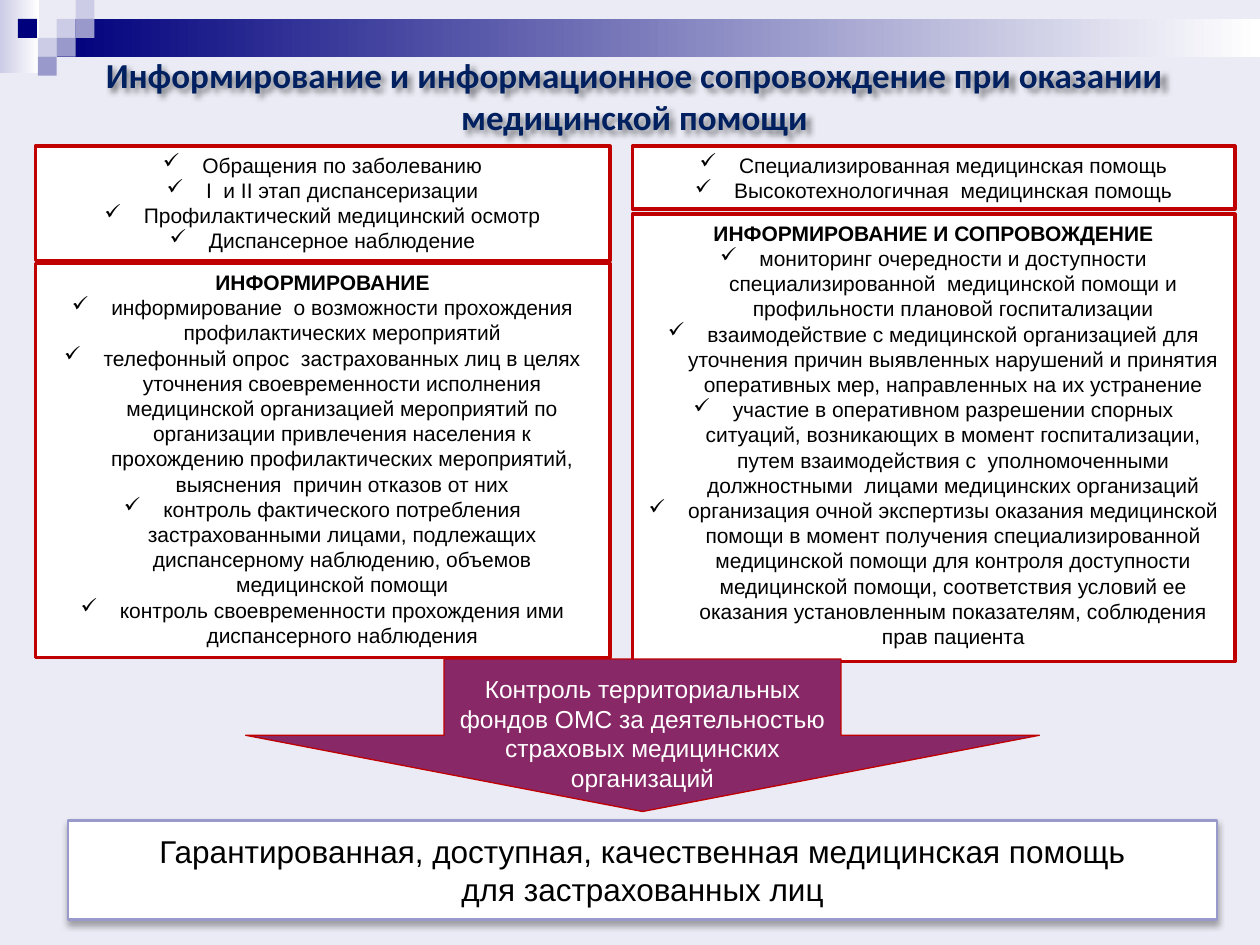
from dataclasses import dataclass
from typing import Optional

from lxml import etree
from pptx import Presentation
from pptx.dml.color import RGBColor
from pptx.enum import shapes, text
from pptx.oxml import ns
from pptx.util import Pt


@dataclass(frozen=True)
class Theme:
    background: str = "EBEBF5"
    navy: str = "00007D"
    lilac: str = "CCCCE6"
    violet: str = "9999CC"
    white: str = "FFFFFF"
    black: str = "000000"
    title: str = "002060"
    red: str = "C00000"
    plum: str = "882866"
    heading_font: str = "Calibri"
    body_font: str = "Arial"
    title_size: float = 20
    body_size: float = 12
    arrow_size: float = 14
    result_size: float = 18
    bullet_indent: float = 22.5


@dataclass(frozen=True)
class Frame:
    left: float
    top: float
    width: float
    height: float


@dataclass(frozen=True)
class Panel:
    frame: Frame
    bullets: tuple[str, ...]
    heading: Optional[str] = None


@dataclass(frozen=True)
class Shadow:
    blur: float
    distance: float
    angle: int
    opacity: int


THEME = Theme()

# Decorative mosaic: column, row and colour on an 10.8 pt grid
TILE = 10.8
TILES = (
    (3, 1, THEME.lilac), (4, 0, THEME.lilac), (4, 1, THEME.violet),
    (2, 2, THEME.lilac), (0.95, 1, THEME.navy), (3, 2, THEME.violet),
    (2, 3, THEME.violet),
)

# Left and right columns of panels
LEFT, LEFT_WIDTH = 20.2, 328.3
RIGHT, RIGHT_WIDTH = 361.4, 344.2
PANEL_TOP = 83.5
PANELS = (
    Panel(Frame(LEFT, PANEL_TOP, LEFT_WIDTH, 65.5), (
        "Обращения по заболеванию",
        "I  и II этап диспансеризации",
        "Профилактический медицинский осмотр",
        "Диспансерное наблюдение",
    )),
    Panel(Frame(LEFT, 150.5, LEFT_WIDTH, 225.4), (
        "информирование  о возможности прохождения профилактических мероприятий",
        "телефонный опрос  застрахованных лиц в целях уточнения своевременности "
        "исполнения медицинской организацией мероприятий по организации привлечения "
        "населения к прохождению профилактических мероприятий, выяснения  причин "
        "отказов от них",
        "контроль фактического потребления застрахованными лицами, подлежащих "
        "диспансерному наблюдению, объемов медицинской помощи",
        "контроль своевременности прохождения ими диспансерного наблюдения",
    ), "ИНФОРМИРОВАНИЕ"),
    Panel(Frame(RIGHT, PANEL_TOP, RIGHT_WIDTH, 36), (
        "Специализированная медицинская помощь",
        "Высокотехнологичная  медицинская помощь",
    )),
    Panel(Frame(RIGHT, 122.4, RIGHT_WIDTH, 255.6), (
        "мониторинг очередности и доступности специализированной  медицинской помощи "
        "и профильности плановой госпитализации",
        "взаимодействие с медицинской организацией для уточнения причин выявленных "
        "нарушений и принятия оперативных мер, направленных на их устранение",
        "участие в оперативном разрешении спорных ситуаций, возникающих в момент "
        "госпитализации, путем взаимодействия с  уполномоченными должностными  лицами "
        "медицинских организаций",
        "организация очной экспертизы оказания медицинской помощи в момент получения "
        "специализированной медицинской помощи для контроля доступности медицинской "
        "помощи, соответствия условий ее оказания установленным показателям, "
        "соблюдения прав пациента",
    ), "ИНФОРМИРОВАНИЕ И СОПРОВОЖДЕНИЕ"),
)


def lengths(frame: Frame) -> tuple:
    return Pt(frame.left), Pt(frame.top), Pt(frame.width), Pt(frame.height)


def add_box(page, frame: Frame, fill: str, line: Optional[str] = None, weight: float = 0,
            kind=shapes.MSO_SHAPE.RECTANGLE):
    box = page.shapes.add_shape(kind, *lengths(frame))
    box.shadow.inherit = False
    box.fill.solid()
    box.fill.fore_color.rgb = RGBColor.from_string(fill)
    if line:
        box.line.color.rgb = RGBColor.from_string(line)
        box.line.width = Pt(weight)
    else:
        box.line.fill.background()
    box.text_frame.word_wrap = True
    return box


def add_gradient(page, frame: Frame, start: str) -> None:
    box = add_box(page, frame, start)
    box.fill.gradient()
    box.fill.gradient_angle = 0
    for stop, colour in zip(box.fill.gradient_stops, (start, THEME.white)):
        stop.color.rgb = RGBColor.from_string(colour)


def add_shadow(box, shadow: Shadow) -> None:
    box.shadow.inherit = False
    effects = box.element.spPr.find(ns.qn("a:effectLst"))
    outer = etree.SubElement(
        effects, ns.qn("a:outerShdw"), blurRad=str(int(Pt(shadow.blur))),
        dist=str(int(Pt(shadow.distance))), dir=str(shadow.angle * 60000),
        algn="tl", rotWithShape="0")
    colour = etree.SubElement(outer, ns.qn("a:srgbClr"), val=THEME.black)
    etree.SubElement(colour, ns.qn("a:alpha"), val=str(shadow.opacity * 1000))


def add_para(box, words: str, size: float, colour: str, font: str = THEME.body_font,
             bold: bool = False, bullet: bool = False) -> None:
    body = box.text_frame
    para = body.paragraphs[0] if not body.text else body.add_paragraph()
    para.text = words
    para.alignment = text.PP_ALIGN.CENTER
    if bullet:
        properties = para._p.get_or_add_pPr()
        indent = int(Pt(THEME.bullet_indent))
        properties.set("marL", str(indent))
        properties.set("indent", str(-indent))
        etree.SubElement(properties, ns.qn("a:buChar"), char="✓")
    para.font.name = font
    para.font.size = Pt(size)
    para.font.bold = bold
    para.font.color.rgb = RGBColor.from_string(colour)


def add_panel(page, panel: Panel) -> None:
    box = add_box(page, panel.frame, THEME.white, THEME.red, 2)
    box.text_frame.vertical_anchor = text.MSO_ANCHOR.TOP
    box.text_frame.auto_size = text.MSO_AUTO_SIZE.SHAPE_TO_FIT_TEXT
    if panel.heading:
        add_para(box, panel.heading, THEME.body_size, THEME.black, bold=True)
    for words in panel.bullets:
        add_para(box, words, THEME.body_size, THEME.black, bullet=True)


def main() -> None:
    deck = Presentation()
    deck.slide_width, deck.slide_height = Pt(720), Pt(540)
    page = deck.slides.add_slide(deck.slide_layouts[6])
    page.background.fill.solid()
    page.background.fill.fore_color.rgb = RGBColor.from_string(THEME.background)

    # Header decoration
    add_gradient(page, Frame(0, 0, 22.3, 41.8), THEME.lilac)
    add_gradient(page, Frame(3 * TILE, TILE, 720 - 3 * TILE, 2 * TILE), THEME.navy)
    for column, row, colour in TILES:
        add_box(page, Frame(column * TILE, row * TILE, TILE, TILE), colour)

    # Title
    title = page.shapes.add_textbox(*lengths(Frame(20.2, 9.4, 684.7, 62.6)))
    title.text_frame.word_wrap = True
    title.text_frame.margin_top = Pt(21)
    add_para(title, "Информирование и информационное сопровождение при оказании медицинской помощи",
             THEME.title_size, THEME.title, THEME.heading_font, bold=True)
    add_shadow(title, Shadow(3, 3, 45, 45))

    # Panels
    for panel in PANELS:
        add_panel(page, panel)

    # Arrow to the result
    arrow = add_box(page, Frame(140.4, 376.6, 453.6, 87.1), THEME.plum, THEME.red, 0.75,
                    shapes.MSO_SHAPE.DOWN_ARROW)
    arrow.text_frame.vertical_anchor = text.MSO_ANCHOR.TOP
    arrow.text_frame.margin_top = Pt(8.8)
    for words in ("Контроль территориальных фондов ОМС за деятельностью",
                  "страховых медицинских организаций"):
        add_para(arrow, words, THEME.arrow_size, THEME.white)

    # Result
    result = add_box(page, Frame(38.9, 468.7, 656.6, 56.9), THEME.white, THEME.violet, 1.5)
    result.text_frame.vertical_anchor = text.MSO_ANCHOR.MIDDLE
    add_shadow(result, Shadow(3.5, 2.2, 90, 32))
    for words in ("Гарантированная, доступная, качественная медицинская помощь",
                  "для застрахованных лиц"):
        add_para(result, words, THEME.result_size, THEME.black)

    deck.save("out.pptx")


if __name__ == "__main__":
    main()
